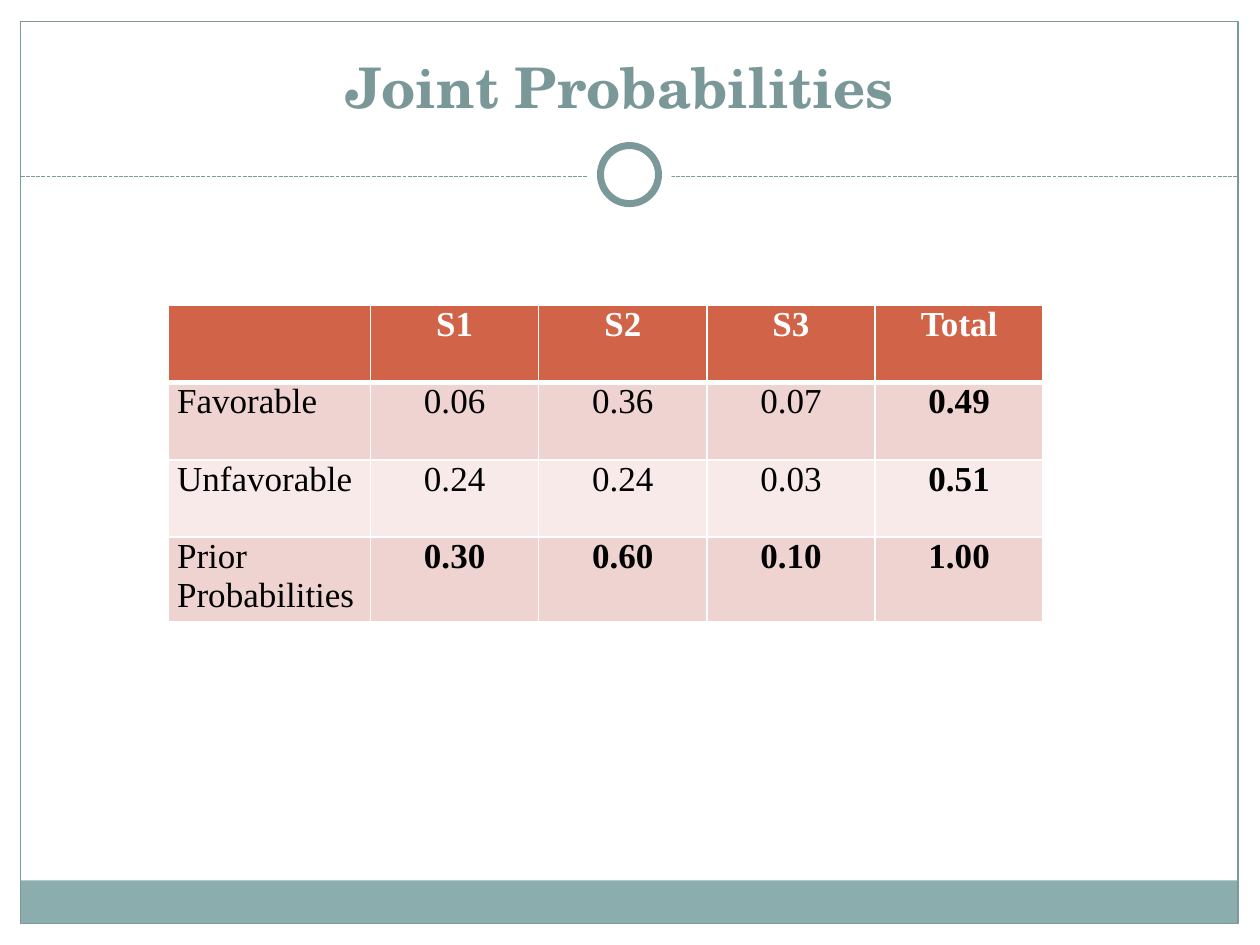
from lxml.etree import SubElement as Sub
from pptx import Presentation
from pptx.dml.color import RGBColor as RGB
from pptx.enum.dml import MSO_LINE as Dash
from pptx.enum.shapes import MSO_CONNECTOR as Link, MSO_SHAPE as Kind
from pptx.enum.text import MSO_ANCHOR as Anchor, PP_ALIGN as Align
from pptx.oxml.ns import qn
from pptx.util import Cm, Pt

INK = {
    "white": "FFFFFF", "black": "000000", "line": "7C999A", "title": "7B9899",
    "bar": "8CADAE", "head": "D16349", "odd": "EED3D0", "even": "F7EAE9",
}
ROWS = [
    ["", "S1", "S2", "S3", "Total"],
    ["Favorable", "0.06", "0.36", "0.07", "0.49"],
    ["Unfavorable", "0.24", "0.24", "0.03", "0.51"],
    ["Prior\nProbabilities", "0.30", "0.60", "0.10", "1.00"],
]


def tint(name):
    """Return the named colour."""
    return RGB.from_string(INK[name])


def write(frame, text, font="Times New Roman", size=20, color="black",
          bold=False, align=Align.CENTER):
    """Put formatted text in a frame."""
    frame.word_wrap = True
    frame.text = text
    for para in frame.paragraphs:
        para.alignment = align
        for run in para.runs:
            face = run.font
            face.name, face.size, face.bold = font, Pt(size), bold
            face.color.rgb = tint(color)


def draw(slide, kind, x, y, w, h, fill=None, line=None, width=0.75):
    """Add a flat shape, in centimetres."""
    shape = slide.shapes.add_shape(kind, Cm(x), Cm(y), Cm(w), Cm(h))
    shape.shadow.inherit = False
    if fill:
        shape.fill.solid()
        shape.fill.fore_color.rgb = tint(fill)
    else:
        shape.fill.background()
    if line:
        shape.line.color.rgb = tint(line)
        shape.line.width = Pt(width)
    else:
        shape.line.fill.background()


def disc(slide, x, y, size, **style):
    """Add a white circle around a centre."""
    draw(slide, Kind.OVAL, x - size / 2, y - size / 2, size, size,
         fill="white", **style)


def add_frame(slide, x, y, w, h):
    """Draw the border, foot bar, dashed rule and ring."""
    foot, rule, mid = 0.87, y + 3.13, x + w / 2
    draw(slide, Kind.RECTANGLE, x, y + h - foot, w, foot, fill="bar")
    draw(slide, Kind.RECTANGLE, x, y, w, h, line="line")
    link = slide.shapes.add_connector(
        Link.STRAIGHT, Cm(x), Cm(rule), Cm(x + w), Cm(rule))
    link.line.color.rgb = tint("line")
    link.line.width = Pt(0.75)
    link.line.dash_style = Dash.SQUARE_DOT
    Sub(link._element.spPr, qn("a:effectLst"))
    disc(slide, mid, rule - 0.04, 1.7)
    disc(slide, mid, rule - 0.04, 1.17, line="line", width=4)


def add_title(slide, x, y, w, h):
    """Add the heading at the foot of its box."""
    box = slide.shapes.add_textbox(Cm(x), Cm(y), Cm(w), Cm(h))
    box.text_frame.vertical_anchor = Anchor.BOTTOM
    write(box.text_frame, "Joint Probabilities", font="TeX Gyre Schola",
          size=32, color="title", bold=True)


def edge(cell, row):
    """Give a cell white borders, thick under the header."""
    props = cell._tc.get_or_add_tcPr()
    thick = {"T": row == 1, "B": row == 0}
    for side in "LRTB":
        width = Pt(3 if thick.get(side) else 1)
        line = Sub(props, qn(f"a:ln{side}"), w=str(width))
        Sub(Sub(line, qn("a:solidFill")), qn("a:srgbClr"), val=INK["white"])


def add_grid(slide, x, y, w, h):
    """Add the table of joint probabilities."""
    count, last, first = len(ROWS), len(ROWS[0]) - 1, 4.08
    table = slide.shapes.add_table(
        count, last + 1, Cm(x), Cm(y), Cm(w), Cm(h)).table
    table.first_row = table.horz_banding = False
    for c, col in enumerate(table.columns):
        col.width = Cm((w - first) / last if c else first)
    for r, texts in enumerate(ROWS):
        table.rows[r].height = Cm(h / count)
        fill = "head" if r == 0 else "odd" if r % 2 else "even"
        for c, text in enumerate(texts):
            cell = table.cell(r, c)
            cell.margin_left = cell.margin_right = Cm(0.18)
            cell.margin_top = cell.margin_bottom = 0
            edge(cell, r)
            cell.fill.solid()
            cell.fill.fore_color.rgb = tint(fill)
            write(cell.text_frame, text,
                  color="black" if r else "white",
                  bold=r == 0 or c == last or (r == count - 1 and c > 0),
                  align=Align.CENTER if c else Align.LEFT)


def main():
    """Build and save the slide."""
    deck = Presentation()
    deck.slide_width, deck.slide_height = Cm(25.4), Cm(19.05)
    slide = deck.slides.add_slide(deck.slide_layouts[6])
    add_frame(slide, 0.42, 0.43, 24.54, 18.19)
    add_title(slide, 1.7, 0.84, 21.59, 1.7)
    add_grid(slide, 3.39, 6.15, 17.64, 6.24)
    deck.save("out.pptx")


if __name__ == "__main__":
    main()
